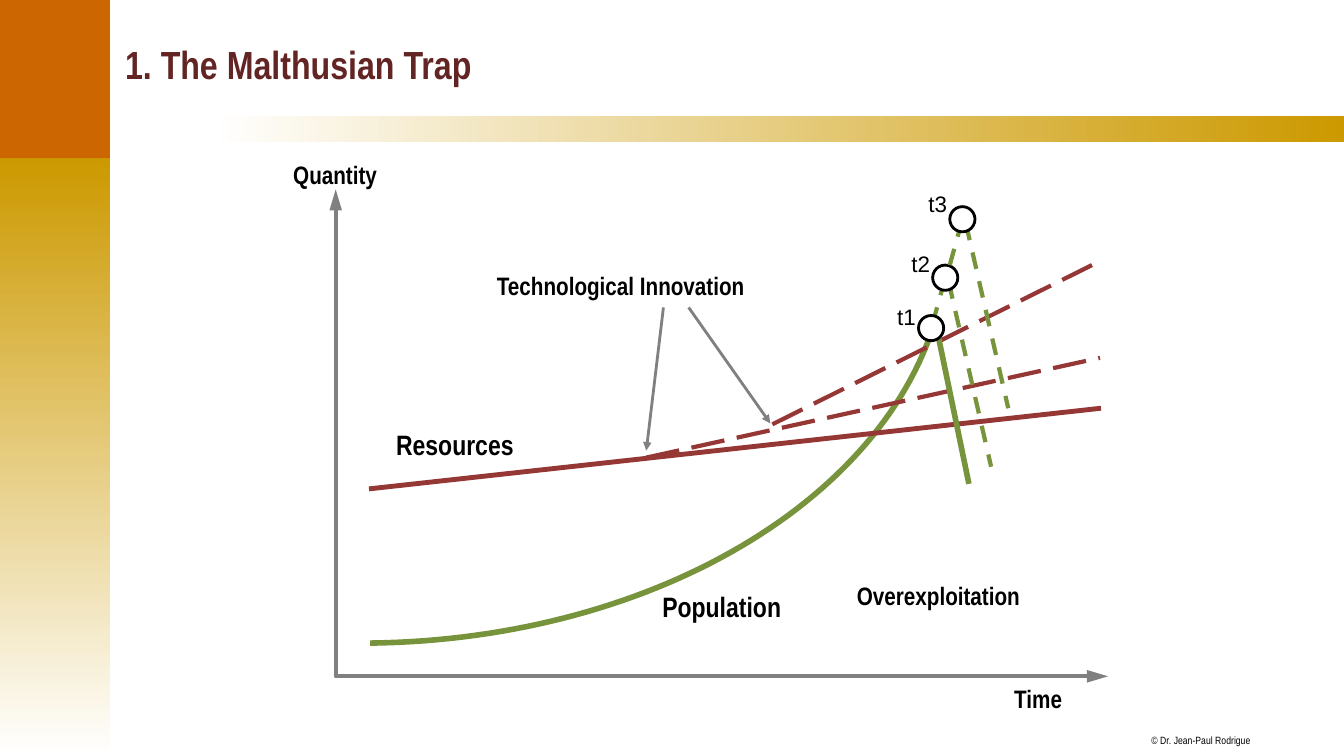
from lxml import etree
from pptx import Presentation
from pptx.dml.color import RGBColor
from pptx.enum.dml import MSO_LINE
from pptx.enum.shapes import MSO_CONNECTOR, MSO_SHAPE
from pptx.enum.text import MSO_ANCHOR, MSO_AUTO_SIZE, PP_ALIGN
from pptx.oxml.ns import qn
from pptx.util import Inches, Pt

BLACK = RGBColor(0x00, 0x00, 0x00)
WHITE = RGBColor(0xFF, 0xFF, 0xFF)
GOLD = RGBColor(0xCC, 0x99, 0x00)
ORANGE = RGBColor(0xCC, 0x66, 0x00)
MAROON = RGBColor(0x63, 0x25, 0x23)
RED = RGBColor(0x95, 0x37, 0x35)
GREEN = RGBColor(0x77, 0x93, 0x3C)
GRAY = RGBColor(0x80, 0x80, 0x80)

STRAIGHT = MSO_CONNECTOR.STRAIGHT
RECTANGLE, OVAL = MSO_SHAPE.RECTANGLE, MSO_SHAPE.OVAL
DASH, LONG_DASH = MSO_LINE.DASH, MSO_LINE.LONG_DASH
MIDDLE, LEFT = MSO_ANCHOR.MIDDLE, PP_ALIGN.LEFT
FIT_TEXT = MSO_AUTO_SIZE.SHAPE_TO_FIT_TEXT
NARROW, PLAIN = "Arial Narrow", "Arial"
COLUMNS, ROWS = 133.3, 75
TITLE_ONLY = 5


class DiagramSlide:
    """Draws styled elements on a slide grid whose cells are a tenth of an inch."""

    def __init__(self, deck):
        self.slide = deck.slides.add_slide(deck.slide_layouts[TITLE_ONLY])
        self.shapes = self.slide.shapes
        self.column = deck.slide_width / COLUMNS
        self.row = deck.slide_height / ROWS

    def place(self, *lengths):
        """Turn alternating columns and rows into slide lengths."""
        units = (self.column, self.row) * (len(lengths) // 2)
        return [round(length * unit) for length, unit in zip(lengths, units)]

    def set_text(self, box, text, size, bold, color, font):
        """Set the text of a box and the font of its paragraph."""
        paragraph = box.text_frame.paragraphs[0]
        paragraph.text = text
        paragraph.alignment = LEFT
        paragraph.font.name = font
        paragraph.font.size = Pt(size)
        paragraph.font.bold = bold
        paragraph.font.color.rgb = color

    def title(self, area, text):
        """Move, fill and format the title placeholder."""
        box = self.shapes.title
        box.left, box.top, box.width, box.height = self.place(*area)
        box.text_frame.vertical_anchor = MIDDLE
        self.set_text(box, text, 28, True, MAROON, NARROW)

    def label(self, area, text, size=18, bold=True, font=NARROW, inset=True):
        """Add a one-line text box."""
        box = self.shapes.add_textbox(*self.place(*area))
        frame = box.text_frame
        frame.word_wrap = False
        frame.auto_size = FIT_TEXT
        if not inset:
            frame.margin_left = frame.margin_right = 0
            frame.margin_top = frame.margin_bottom = 0
        self.set_text(box, text, size, bold, BLACK, font)

    def preset(self, kind, area):
        """Add a preset shape without shadow or outline."""
        shape = self.shapes.add_shape(kind, *self.place(*area))
        shape.shadow.inherit = False
        shape.line.fill.background()
        return shape

    def block(self, area, color):
        """Add a plain rectangle."""
        fill = self.preset(RECTANGLE, area).fill
        fill.solid()
        fill.fore_color.rgb = color

    def band(self, area, colors, angle):
        """Add a rectangle with a two-colour gradient."""
        fill = self.preset(RECTANGLE, area).fill
        fill.gradient()
        fill.gradient_angle = angle
        for stop, color in zip(fill.gradient_stops, colors):
            stop.color.rgb = color

    def marker(self, left, top):
        """Add a white circle with a black outline."""
        circle = self.preset(OVAL, (left, top, 2.5, 2.5))
        circle.fill.solid()
        circle.fill.fore_color.rgb = WHITE
        self.stroke(circle, BLACK, 2)

    def stroke(self, shape, color, width, dash=None, ends=(), length="med"):
        """Style a line and its arrowheads."""
        line = shape.line
        line.color.rgb = color
        line.width = Pt(width)
        if dash:
            line.dash_style = dash
        outline = shape.element.spPr.find(qn("a:ln"))
        for end in ends:
            etree.SubElement(outline, qn(f"a:{end}"), type="triangle", w="med", len=length)

    def line(self, start, stop, color, width, dash=None, ends=()):
        """Add a straight line between two grid points."""
        connector = self.shapes.add_connector(STRAIGHT, *self.place(*start, *stop))
        self.stroke(connector, color, width, dash, ends)
        etree.SubElement(connector.element.spPr, qn("a:effectLst"))

    def trace(self, points, color, width, ends=()):
        """Add an open outline through grid points."""
        first, *others = [self.place(*point) for point in points]
        builder = self.shapes.build_freeform(*first)
        builder.add_line_segments(others, close=False)
        shape = builder.convert_to_shape()
        shape.fill.background()
        shape.shadow.inherit = False
        self.stroke(shape, color, width, ends=ends, length="lg")


def bezier(controls, steps=60):
    """Return points along a cubic curve."""
    points = []
    for step in range(steps + 1):
        t = step / steps
        weights = ((1 - t) ** 3, 3 * t * (1 - t) ** 2, 3 * t * t * (1 - t), t ** 3)
        points.append([sum(w * v for w, v in zip(weights, axis)) for axis in zip(*controls)])
    return points


def draw_frame(page):
    """Draw the decoration, the credit and the title."""
    page.band((-0.2, 15.7, 11.1, 59.3), (GOLD, WHITE), 270)
    page.band((20.9, 11.5, 112.4, 2.6), (WHITE, GOLD), 0)
    page.label((114.2, 72.8, 9.9, 1.3), "© Dr. Jean-Paul Rodrigue", 7.5, False, inset=False)
    page.block((-0.2, -0.1, 11.1, 15.8), ORANGE)
    page.title((11.4, 1.1, 119.7, 10.4), "1. The Malthusian Trap")


def draw_trends(page):
    """Draw the axes, the population curve and the resource lines."""
    page.trace([(33.3, 18.8), (33.3, 67.1), (109.9, 67.1)], GRAY, 3, ("headEnd", "tailEnd"))
    page.trace(bezier([(92.6, 32.3), (86.7, 50.5), (63.6, 63.5), (36.7, 63.8)]), GREEN, 4)
    page.line((36.6, 48.5), (109.2, 40.5), RED, 3.5)
    page.line((64.1, 45.4), (109.1, 35.5), RED, 3, LONG_DASH)
    page.line((76.6, 42.1), (108.3, 26.3), RED, 3, LONG_DASH)
    page.line((65.8, 30.5), (64.1, 44.7), GRAY, 2, ends=("tailEnd",))
    page.line((68.3, 30.5), (76.4, 42), GRAY, 2, ends=("tailEnd",))

    page.label((28.1, 15.3, 10.4, 4), "Quantity")
    page.label((99.6, 67.3, 6.8, 4), "Time")
    page.label((84, 57.1, 18.2, 4), "Overexploitation")
    page.label((48.3, 26.3, 26.8, 4), "Technological Innovation")
    page.label((64.7, 58, 13.9, 4.4), "Population", 20)
    page.label((38.3, 41.9, 13.8, 4.4), "Resources", 20)


def draw_collapses(page):
    """Draw the three moments when population outgrows resources."""
    moments = [("t2", 92.5, 26.3, 24.3), ("t3", 94.2, 20.5, 18.4), ("t1", 91.1, 31.3, 29.6)]
    for name, left, top, label_top in moments:
        page.label((left - 3.1, label_top, 3.9, 3.7), name, 16, False, PLAIN)
        if name == "t1":
            page.line((92.8, 32.1), (96.1, 48), GREEN, 4)
        else:
            peak = left + 1.6
            page.line((peak - 1.6, top + 5.8), (peak, top), GREEN, 3, DASH)
            page.line((peak, top + 1.7), (peak + 4.2, top + 20), GREEN, 3, DASH)
        page.marker(left, top)


def main():
    """Build and save the slide."""
    deck = Presentation()
    deck.slide_width, deck.slide_height = Inches(13.33), Inches(7.5)
    page = DiagramSlide(deck)
    draw_frame(page)
    draw_trends(page)
    draw_collapses(page)
    deck.save("out.pptx")


if __name__ == "__main__":
    main()
